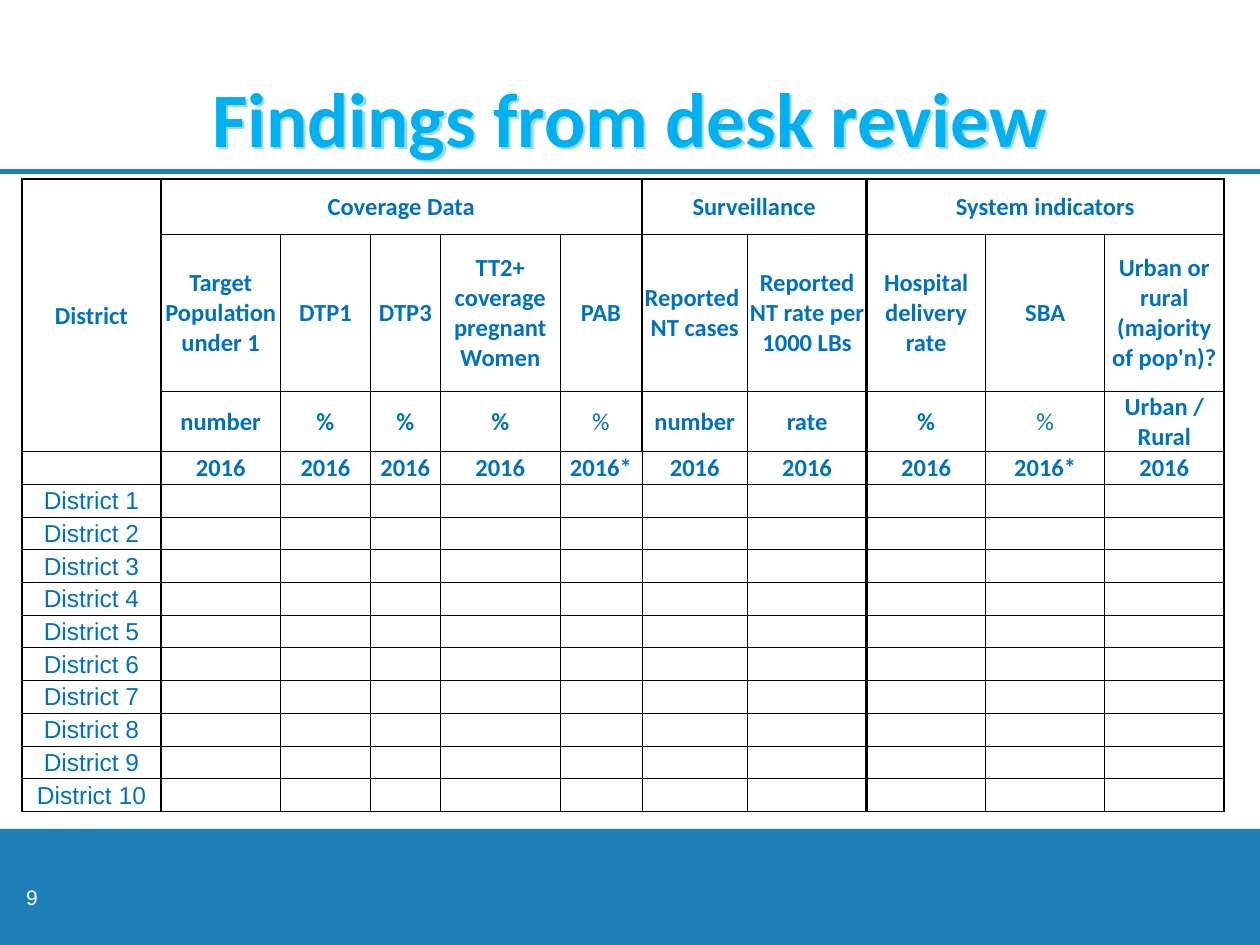
from dataclasses import dataclass

from lxml import etree
from pptx import Presentation
from pptx.dml.color import RGBColor
from pptx.enum.shapes import MSO_CONNECTOR, MSO_SHAPE
from pptx.enum.text import MSO_ANCHOR, PP_ALIGN
from pptx.oxml.ns import qn
from pptx.util import Cm, Pt

LINE = MSO_CONNECTOR.STRAIGHT
RECTANGLE = MSO_SHAPE.RECTANGLE
CENTER, RIGHT = PP_ALIGN.CENTER, PP_ALIGN.RIGHT
MIDDLE, TOP = MSO_ANCHOR.MIDDLE, MSO_ANCHOR.TOP


@dataclass(frozen=True)
class Theme:
    band: str = "1E7FB8"
    title: str = "00B0F0"
    text: str = "0070C0"
    border: str = "000000"
    white: str = "FFFFFF"
    heading_font: str = "Calibri"
    plain_font: str = "Arial"
    title_size: int = 44
    table_size: int = 14
    number_size: int = 12
    thick: float = 1.5
    medium: float = 1
    thin: float = 0.5


THEME = Theme()
PAGE_WIDTH, PAGE_HEIGHT = 25.4, 19.05

# Table content: (heading, columns spanned), then one entry per indicator
GROUPS = [("Coverage Data", 5), ("Surveillance", 2), ("System indicators", 3)]
INDICATORS = [
    ("Target Population under 1", "number", "2016"),
    ("DTP1", "%", "2016"),
    ("DTP3", "%", "2016"),
    ("TT2+ coverage pregnant Women", "%", "2016"),
    ("PAB", "%", "2016*"),
    ("Reported \nNT cases", "number", "2016"),
    ("Reported NT rate per 1000 LBs", "rate", "2016"),
    ("Hospital delivery rate", "%", "2016"),
    ("SBA", "%", "2016*"),
    ("Urban or rural (majority of pop'n)?", "Urban / Rural", "2016"),
]
HEADER_ROWS, DISTRICTS = 4, 10
COLUMN_WIDTHS = [2.79, 2.42, 1.8, 1.42, 2.41, 1.65, 2.13] + [2.4] * 4
ROW_HEIGHTS = [1.12, 3.15, 1.22] + [0.66] * (DISTRICTS + 1)


def set_margins(holder, margins):
    """Set the insets of a text frame or a table cell."""
    (holder.margin_left, holder.margin_top,
     holder.margin_right, holder.margin_bottom) = map(Cm, margins)


def write_text(frame, text, *, size, color, font=THEME.heading_font, bold=False,
               align=CENTER):
    """Fill a text frame, one paragraph per line of text."""
    for index, line in enumerate(text.split("\n")):
        para = frame.paragraphs[0] if index == 0 else frame.add_paragraph()
        para.alignment = align
        para.space_before = Pt(0)
        span = para.add_run()
        span.text = line
        span.font.name = font
        span.font.size = Pt(size)
        span.font.bold = bold
        span.font.color.rgb = RGBColor.from_string(color)


def add_shadow(shape, color):
    """Put an offset shadow behind the letters of an unfilled shape."""
    effects = etree.SubElement(shape._element.spPr, qn("a:effectLst"))
    shadow = etree.SubElement(effects, qn("a:outerShdw"), dist="25400",
                              dir="2700000", algn="tl", rotWithShape="0")
    tint = etree.SubElement(shadow, qn("a:srgbClr"), val=color)
    etree.SubElement(tint, qn("a:alpha"), val="43000")


def add_title(page, left, top, width, height):
    title = page.shapes.title
    title.left, title.top, title.width, title.height = map(
        Cm, (left, top, width, height))
    frame = title.text_frame
    frame.word_wrap = True
    frame.vertical_anchor = MIDDLE
    set_margins(frame, (0, 0, 0, 0))
    write_text(frame, "Findings from desk review", bold=True,
               size=THEME.title_size, color=THEME.title)
    title.fill.background()
    add_shadow(title, THEME.title)


def add_rule(page, left, top, width):
    rule = page.shapes.add_connector(LINE, Cm(left), Cm(top),
                                     Cm(left + width), Cm(top))
    rule.line.color.rgb = RGBColor.from_string(THEME.band)
    rule.line.width = Pt(3)
    etree.SubElement(rule._element.spPr, qn("a:effectLst"))


def add_footer(page, left, top, width, height):
    band = page.shapes.add_shape(RECTANGLE, Cm(left), Cm(top), Cm(width), Cm(height))
    band.shadow.inherit = False
    band.fill.solid()
    band.fill.fore_color.rgb = RGBColor.from_string(THEME.band)
    band.line.fill.background()
    # Slide number, right-aligned close to the left edge
    box = page.shapes.add_textbox(Cm(left), Cm(top + 1.02), Cm(0.99), Cm(1.3))
    frame = box.text_frame
    frame.word_wrap = True
    frame.vertical_anchor = TOP
    set_margins(frame, (0.23, 0.1, 0.23, 0.1))
    write_text(frame, "9", size=THEME.number_size, color=THEME.white,
               font=THEME.plain_font, align=RIGHT)


def vertical_width(row, line):
    """Width of the vertical rule on a column boundary."""
    if line in (0, 1, 8, 11) or (line == 6 and row < 3):
        return THEME.thick
    return THEME.medium if line == 10 and row in (1, 2) else THEME.thin


def horizontal_width(line, column):
    """Width of the horizontal rule on a row boundary."""
    if line == 0:
        return THEME.thick
    return THEME.medium if line == 1 and column > 0 else THEME.thin


def set_borders(cell, row, column):
    end_row, end_column = row + cell.span_height, column + cell.span_width
    widths = {"a:lnL": vertical_width(row, column),
              "a:lnR": vertical_width(row, end_column),
              "a:lnT": horizontal_width(row, column),
              "a:lnB": horizontal_width(end_row, column)}
    properties = cell._tc.get_or_add_tcPr()
    for position, (tag, width) in enumerate(widths.items()):
        border = etree.Element(qn(tag), w=str(Pt(width)))
        fill = etree.SubElement(border, qn("a:solidFill"))
        etree.SubElement(fill, qn("a:srgbClr"), val=THEME.border)
        properties.insert(position, border)


def write_cell(cell, text, **style):
    cell.vertical_anchor = MIDDLE
    set_margins(cell, (0.02, 0.02, 0.02, 0))
    if text:
        write_text(cell.text_frame, text, size=THEME.table_size,
                   color=THEME.text, **style)
    else:
        # The end mark keeps an empty row from growing
        etree.SubElement(cell.text_frame.paragraphs[0]._p, qn("a:endParaRPr"),
                         sz=str(THEME.number_size * 100))


def table_texts():
    """Map (row, column) to the text of each filled cell."""
    texts = {(0, 0): "District"}
    for column, entries in enumerate(INDICATORS, 1):
        for row, entry in enumerate(entries, 1):
            texts[row, column] = entry
    for number in range(1, DISTRICTS + 1):
        texts[HEADER_ROWS + number - 1, 0] = f"District {number}"
    return texts


def add_indicator_table(page, left, top):
    frame = page.shapes.add_table(
        len(ROW_HEIGHTS), len(COLUMN_WIDTHS), Cm(left), Cm(top),
        Cm(sum(COLUMN_WIDTHS)), Cm(sum(ROW_HEIGHTS)))
    table = frame.table
    table.first_row = table.horz_banding = False
    for column, width in zip(table.columns, COLUMN_WIDTHS):
        column.width = Cm(width)
    for row, height in zip(table.rows, ROW_HEIGHTS):
        row.height = Cm(height)

    # Merged headings
    texts = table_texts()
    table.cell(0, 0).merge(table.cell(2, 0))
    first = 1
    for heading, count in GROUPS:
        table.cell(0, first).merge(table.cell(0, first + count - 1))
        texts[0, first] = heading
        first += count

    for row in range(len(ROW_HEIGHTS)):
        for column in range(len(COLUMN_WIDTHS)):
            cell = table.cell(row, column)
            cell.fill.background()
            if cell.is_spanned:
                continue
            is_district = row >= HEADER_ROWS
            is_light = is_district or (row == 2 and column in (5, 9))
            write_cell(cell, texts.get((row, column), ""), bold=not is_light,
                       font=THEME.plain_font if is_district else THEME.heading_font)
            set_borders(cell, row, column)


def main():
    deck = Presentation()
    deck.slide_width, deck.slide_height = Cm(PAGE_WIDTH), Cm(PAGE_HEIGHT)
    page = deck.slides.add_slide(deck.slide_layouts[5])
    add_rule(page, 0, 3.45, PAGE_WIDTH)
    add_footer(page, 0, 16.71, PAGE_WIDTH, 2.34)
    add_title(page, 1.27, 0.76, 22.86, 3.18)
    add_indicator_table(page, 0.45, 3.61)
    deck.save("out.pptx")


if __name__ == "__main__":
    main()
